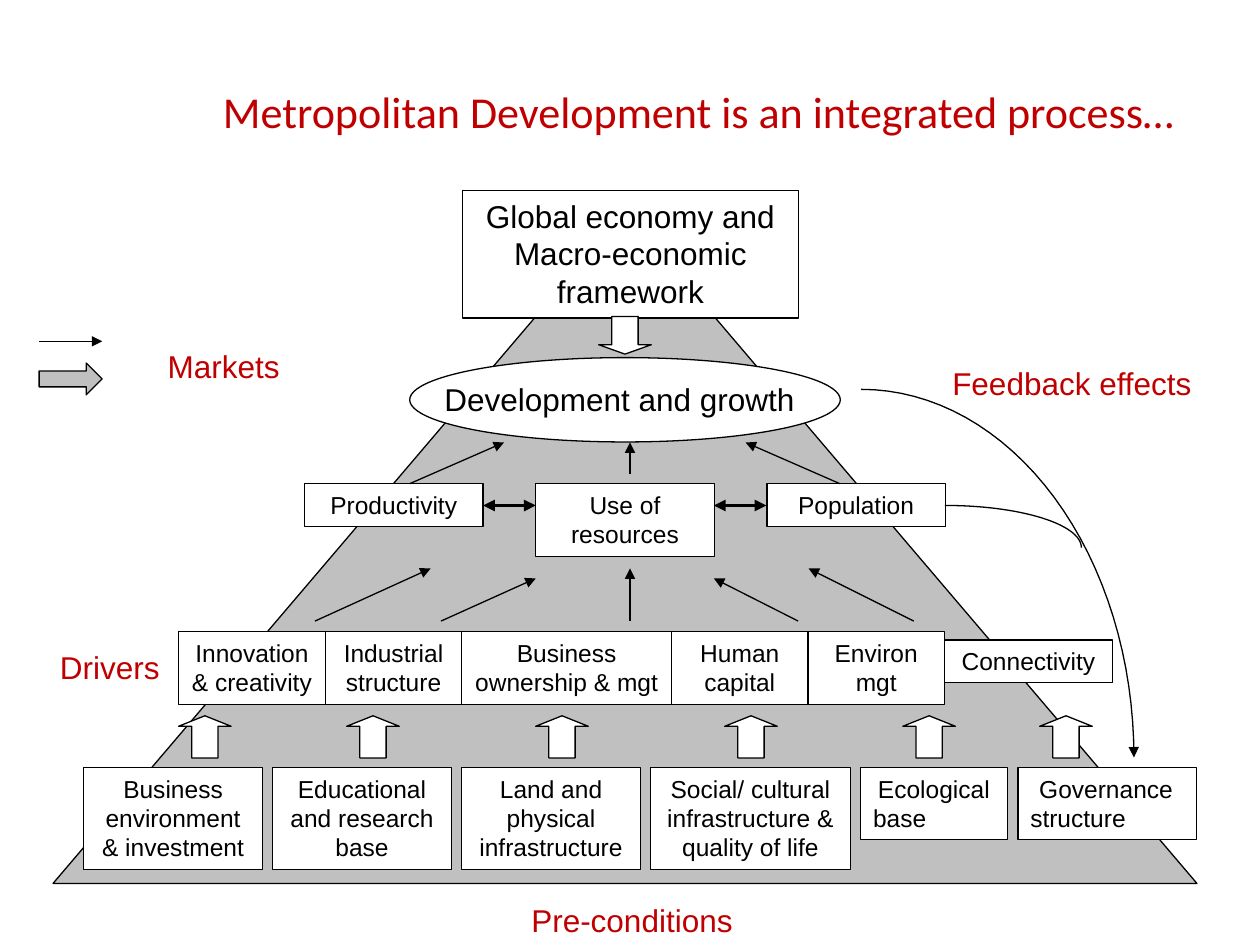
import math

import lxml.etree
import pptx
import pptx.dml.color
import pptx.enum.shapes
import pptx.enum.text
import pptx.oxml.ns
import pptx.util

Cm = pptx.util.Cm
Pt = pptx.util.Pt
SHAPE = pptx.enum.shapes.MSO_SHAPE
ALIGN = pptx.enum.text.PP_ALIGN
qn = pptx.oxml.ns.qn

RED = pptx.dml.color.RGBColor(0xC0, 0x00, 0x00)
BLACK = pptx.dml.color.RGBColor(0x00, 0x00, 0x00)
WHITE = pptx.dml.color.RGBColor(0xFF, 0xFF, 0xFF)
GRAY = pptx.dml.color.RGBColor(0xC0, 0xC0, 0xC0)

prs = pptx.Presentation()
prs.slide_width = Cm(25.4)
prs.slide_height = Cm(19.05)
slide = prs.slides.add_slide(prs.slide_layouts[5])


def add_item(kind, x, y, w, h, text="", size=14, color=BLACK, fill=WHITE):
    """Add an outlined shape, or a plain text box when kind is None."""
    place = Cm(x), Cm(y), Cm(w), Cm(h)
    if kind is None:
        s = slide.shapes.add_textbox(*place)
    else:
        s = slide.shapes.add_shape(kind, *place)
        s.shadow.inherit = False
        s.fill.solid()
        s.fill.fore_color.rgb = fill
        s.line.color.rgb = BLACK
        s.line.width = Pt(0.75)
    if text:
        tf = s.text_frame
        tf.text = text
        tf.word_wrap = True
        tf.vertical_anchor = pptx.enum.text.MSO_ANCHOR.TOP
        p = tf.paragraphs[0]
        p.alignment = ALIGN.CENTER
        p.font.name = "Arial"
        p.font.size = Pt(size)
        p.font.color.rgb = color
    return s


def style_line(s, width=0.75, ends=("tailEnd",)):
    """Make a black line without shadow, with arrowheads at the given ends."""
    s.line.color.rgb = BLACK
    s.line.width = Pt(width)
    sp_pr = s._element.spPr
    for end in ends:
        lxml.etree.SubElement(sp_pr.find(qn("a:ln")), qn("a:" + end), type="triangle")
    if sp_pr.find(qn("a:effectLst")) is None:
        lxml.etree.SubElement(sp_pr, qn("a:effectLst"))


# Title
title = slide.shapes.title
title.left, title.top, title.width, title.height = Cm(2.77), Cm(1.52), Cm(22.63), Cm(1.42)
title.text_frame.text = "Metropolitan Development is an integrated process…"
title.text_frame.vertical_anchor = pptx.enum.text.MSO_ANCHOR.MIDDLE
p = title.text_frame.paragraphs[0]
p.alignment = ALIGN.CENTER
r = p.runs[0]
r.font.name = "Calibri"
r.font.size = Pt(25.2)
r.font.color.rgb = RED

# Pyramid
add_item(SHAPE.ISOSCELES_TRIANGLE, 1.07, 4.27, 23.06, 13.54, fill=GRAY)

# Pre-conditions: text, width, height, first-line indent of left-aligned text
x = 1.69
for text, w, h, indent in [
    ("Business environment & investment", 3.6, 2.06, None),
    ("Educational and research base", 3.6, 2.06, None),
    ("Land and physical infrastructure", 3.6, 2.06, None),
    ("Social/ cultural infrastructure & quality of life", 4.02, 2.06, None),
    ("Ecological base", 2.96, 1.46, 0.1),
    ("Governance structure", 3.6, 1.46, 0.18),
]:
    s = add_item(SHAPE.RECTANGLE, x, 15.47, w, h, text)
    if indent:
        p = s.text_frame.paragraphs[0]
        p.alignment = ALIGN.LEFT
        p._p.get_or_add_pPr().set("indent", str(Cm(indent)))
    x += w + 0.21

# Drivers, side by side
x = 3.6
for text, w in [
    ("Innovation & creativity", 2.96),
    ("Industrial structure", 2.75),
    ("Business ownership & mgt", 4.23),
    ("Human capital", 2.75),
    ("Environ mgt", 2.75),
]:
    add_item(SHAPE.RECTANGLE, x, 12.73, w, 1.47, text)
    x += w
add_item(SHAPE.RECTANGLE, x, 12.9, 3.39, 0.86, "Connectivity")

# Outcomes
for i, (text, h) in enumerate(
    [("Productivity", 0.86), ("Use of resources", 1.47), ("Population", 0.86)]
):
    add_item(SHAPE.RECTANGLE, 6.14 + 4.66 * i, 9.75, 3.6, h, text)

# Top of the pyramid
add_item(SHAPE.OVAL, 8.26, 7.21, 8.68, 1.7)
add_item(None, 8.26, 7.54, 8.46, 1.02, "Development and growth", 18)
add_item(SHAPE.RECTANGLE, 9.32, 3.84, 6.78, 2.57,
         "Global economy and Macro-economic framework", 18)

# Block arrows
block_arrows = [add_item(SHAPE.UP_ARROW, x, 14.43, 1.06, 0.85)
                for x in (3.6, 6.99, 10.8, 14.61, 18.2, 20.96)]
block_arrows.append(add_item(SHAPE.DOWN_ARROW, 12.07, 6.38, 1.06, 0.76))
for s in block_arrows:
    s.adjustments[1] = 0.25
add_item(SHAPE.RIGHT_ARROW, 0.79, 7.32, 1.27, 0.64, fill=GRAY)

# Thin arrows: drivers to outcomes, outcomes to growth, legend
for x1, y1, x2, y2 in [
    (6.35, 12.52, 8.68, 11.46),
    (8.89, 12.52, 10.8, 11.66),
    (12.7, 12.52, 12.7, 11.46),
    (16.09, 12.52, 14.39, 11.66),
    (18.42, 12.52, 16.3, 11.46),
    (8.26, 9.75, 10.16, 8.92),
    (12.7, 9.55, 12.7, 8.92),
    (16.93, 9.75, 15.03, 8.92),
    (0.79, 6.88, 2.06, 6.88),
]:
    s = slide.shapes.add_connector(1, Cm(x1), Cm(y1), Cm(x2), Cm(y2))
    style_line(s)

# Two-way arrows between outcomes
for x in (9.74, 14.39):
    s = slide.shapes.add_connector(1, Cm(x), Cm(10.19), Cm(x + 1.06), Cm(10.19))
    style_line(s, 2.25, ("headEnd", "tailEnd"))

# Feedback curves: quarter ellipses
STEPS = 32
for x, y, w, h, ends in [
    (17.36, 7.85, 5.5, 7.42, ("tailEnd",)),
    (19.05, 10.19, 2.75, 0.85, ()),
]:
    angles = [math.pi / 2 * i / STEPS for i in range(1, STEPS + 1)]
    builder = slide.shapes.build_freeform(Cm(x), Cm(y))
    builder.add_line_segments(
        [(Cm(x + w * math.sin(a)), Cm(y + h * (1 - math.cos(a)))) for a in angles],
        close=False,
    )
    s = builder.convert_to_shape()
    s.shadow.inherit = False
    s.fill.background()
    style_line(s, ends=ends)

# Red labels
for text, x, y, w in [
    ("Pre-conditions", 5.44, 18.03, 14.6),
    ("Drivers", 0.84, 12.93, 2.75),
    ("Feedback effects", 18.75, 7.21, 5.72),
    ("Markets", 2.92, 6.88, 3.18),
]:
    add_item(None, x, y, w, 1.02, text, 18, RED)

prs.save("out.pptx")
